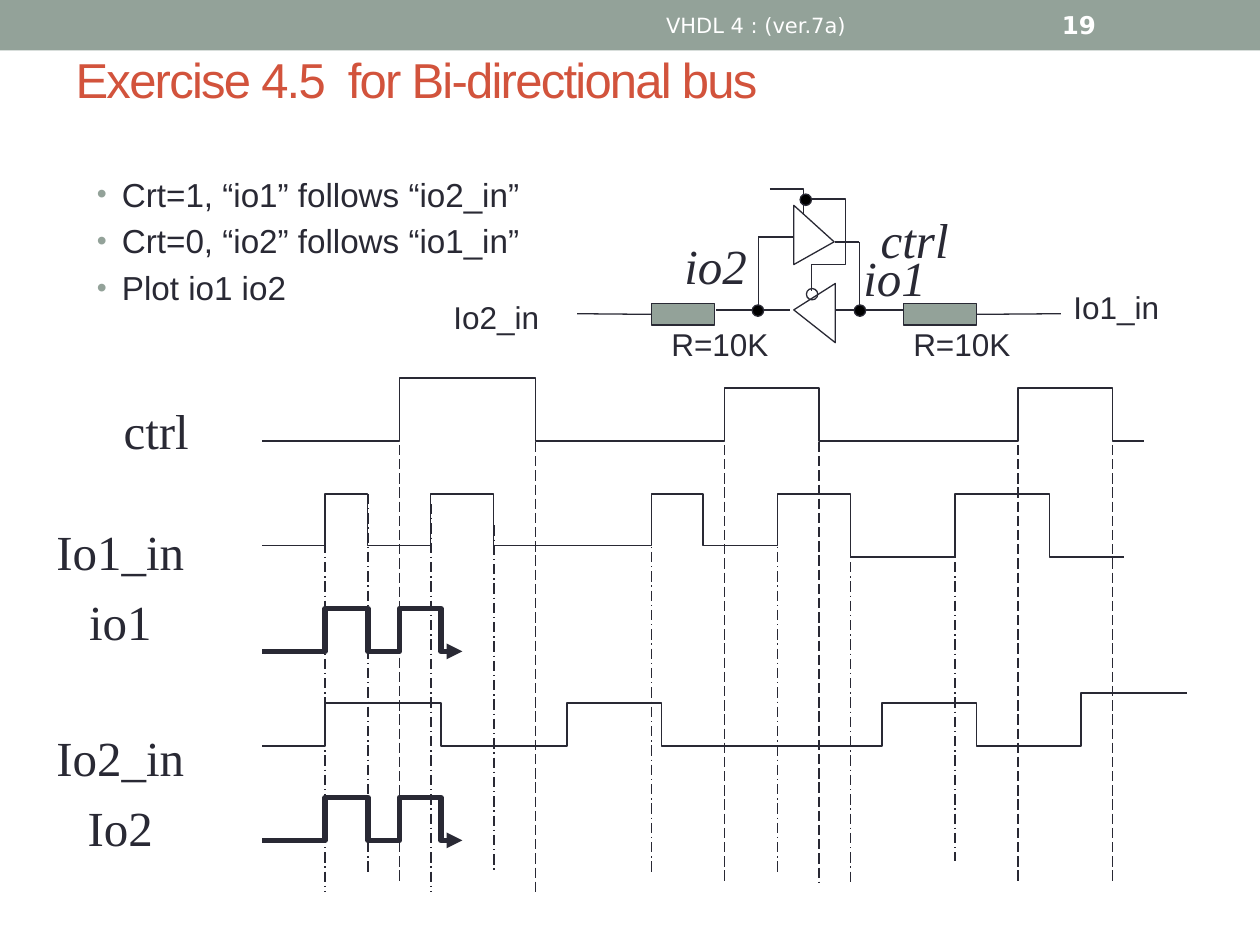
"""Build the bi-directional bus exercise slide."""
from lxml import etree
from pptx import Presentation
from pptx.dml.color import RGBColor
from pptx.enum import dml, shapes, text
from pptx.oxml.ns import qn
from pptx.util import Inches, Pt

INK, SAGE, RED, WHITE, BLACK = "292934", "93A299", "D2533C", "FFFFFF", "000000"
SERIF, SANS, HEADER = "Times New Roman", "Arial", "DejaVu Sans"
DASH, DASH_DOT = dml.MSO_LINE.LONG_DASH, dml.MSO_LINE.LONG_DASH_DOT


def color(value):
    """Turn a hex string into a colour."""
    return RGBColor.from_string(value)


def style_line(line, width=0.75):
    """Give a line the ink colour and a width in points."""
    line.color.rgb = color(INK)
    line.width = Pt(width)


def style_runs(paragraph, font, size, ink=INK, bold=False, italic=False):
    """Format every run of a paragraph."""
    for run in paragraph.runs:
        run.font.name, run.font.size = font, Pt(size)
        run.font.bold, run.font.italic = bold, italic
        run.font.color.rgb = color(ink)


def add_label(slide, box, words, font=SERIF, size=28, centred=True, middle=True, **look):
    """Add a one-line label."""
    frame = slide.shapes.add_textbox(*map(Inches, box)).text_frame
    frame.word_wrap = False
    frame.vertical_anchor = text.MSO_ANCHOR.MIDDLE if middle else text.MSO_ANCHOR.TOP
    frame.text = words
    paragraph = frame.paragraphs[0]
    paragraph.alignment = text.PP_ALIGN.CENTER if centred else text.PP_ALIGN.LEFT
    style_runs(paragraph, font, size, **look)


def add_box(slide, kind, box, fill=None, outline=True):
    """Add a preset shape, hollow unless a fill is given."""
    shape = slide.shapes.add_shape(kind, *map(Inches, box))
    shape.shadow.inherit = False
    if fill:
        shape.fill.solid()
        shape.fill.fore_color.rgb = color(fill)
    else:
        shape.fill.background()
    if outline:
        style_line(shape.line)
    else:
        shape.line.fill.background()
    return shape


def add_line(slide, start, end, dash=None):
    """Add a straight connector between two points."""
    connector = slide.shapes.add_connector(
        shapes.MSO_CONNECTOR.STRAIGHT, *map(Inches, (*start, *end)))
    style_line(connector.line)
    if dash:
        connector.line.dash_style = dash
    etree.SubElement(connector._element.spPr, qn("a:effectLst"))
    return connector


def add_path(slide, points, closed=False, width=0.75, arrow=False):
    """Add an unfilled outline through the points."""
    points = [(Inches(x), Inches(y)) for x, y in points]
    builder = slide.shapes.build_freeform(*points[0])
    builder.add_line_segments(points[1:], close=closed)
    shape = builder.convert_to_shape()
    shape.shadow.inherit = False
    shape.fill.background()
    style_line(shape.line, width)
    if arrow:
        outline = shape._element.spPr.find(qn("a:ln"))
        etree.SubElement(outline, qn("a:tailEnd"), type="triangle")


def add_wave(slide, level, edges, end, start=2.08, **look):
    """Draw a square wave from its (time, new level) edges."""
    points = [(start, level)]
    for x, new_level in edges:
        points += [(x, level), (x, new_level)]
        level = new_level
    add_path(slide, points + [(end, level)], **look)


def add_title(slide):
    """Place and format the title."""
    title = slide.shapes.title
    title.left, title.top, title.width, title.height = map(Inches, (0.5, 0, 9, 1.25))
    frame = title.text_frame
    frame.text = "Exercise 4.5  for Bi-directional bus"
    frame.vertical_anchor = text.MSO_ANCHOR.MIDDLE
    paragraph = frame.paragraphs[0]
    paragraph.alignment = text.PP_ALIGN.LEFT
    style_runs(paragraph, SANS, 28, RED)
    paragraph.runs[0].font._element.set("spc", "-100")


def add_bullets(slide, items):
    """Add the bulleted instructions."""
    frame = slide.shapes.add_textbox(*map(Inches, (0.67, 1.33, 8.5, 5.42))).text_frame
    frame.word_wrap = True
    frame.text = "\n".join(items)
    for paragraph in frame.paragraphs:
        paragraph.space_before = Pt(4)
        style_runs(paragraph, SANS, 19)
        properties = paragraph._p.get_or_add_pPr()
        properties.set("marL", str(Inches(0.2)))
        properties.set("indent", str(Inches(-0.2)))
        bullet_color = etree.SubElement(properties, qn("a:buClr"))
        etree.SubElement(bullet_color, qn("a:srgbClr"), val=SAGE)
        etree.SubElement(properties, qn("a:buSzPct"), val="85000")
        etree.SubElement(properties, qn("a:buFont"), typeface=SANS)
        etree.SubElement(properties, qn("a:buChar"), char="•")


def add_timing(slide):
    """Draw the waveforms, their labels and the time guides."""
    add_label(slide, (0.84, 3.13, 0.8, 0.57), "ctrl")
    for words, middle in (("Io1_in", 4.37), ("io1", 4.93), ("Io2_in", 6.01), ("Io2", 6.56)):
        add_label(slide, (0.08, middle - 0.28, 1.75, 0.56), words)

    add_wave(slide, 3.5, [(3.17, 3), (4.25, 3.5), (5.75, 3.08), (6.5, 3.5),
                          (8.08, 3.08), (8.83, 3.5)], 9.08)
    add_wave(slide, 4.33, [(2.58, 3.92), (2.92, 4.33), (3.42, 3.92), (3.92, 4.33),
                           (5.17, 3.92), (5.58, 4.33), (6.17, 3.92), (6.75, 4.42),
                           (7.58, 3.92), (8.33, 4.42)], 8.92)
    add_wave(slide, 5.92, [(2.58, 5.58), (3.5, 5.92), (4.5, 5.58), (5.25, 5.92),
                           (7, 5.58), (7.75, 5.92), (8.58, 5.5)], 9.42)
    for low in (5.17, 6.67):
        high = low - 0.34
        add_wave(slide, low, [(2.58, high), (2.92, low), (3.17, high), (3.5, low)],
                 3.67, width=3, arrow=True)

    for x, top, bottom in ((3.17, 3.08, 7), (4.25, 3.17, 7.08), (5.75, 3.08, 7),
                           (6.5, 3.17, 7), (8.08, 3.08, 7), (8.83, 3.08, 7)):
        add_line(slide, (x, top), (x, bottom), DASH)
    for x, top, bottom in ((2.58, 4, 7.08), (2.92, 3.92, 6.92), (3.42, 4, 7.08),
                           (3.92, 4.17, 6.92), (5.17, 3.92, 6.92), (6.17, 3.92, 6.92),
                           (6.75, 4, 7), (7.58, 4, 6.83)):
        add_line(slide, (x, top), (x, bottom), DASH_DOT)


def add_circuit(slide):
    """Draw the two tri-state buffers with their resistors."""
    add_path(slide, [(6.3, 2.1), (6.3, 1.63), (6.62, 1.92)], closed=True)
    add_path(slide, [(6.63, 2.25), (6.3, 2.46), (6.63, 2.72)], closed=True)
    add_path(slide, [(6.11, 1.5), (6.38, 1.5), (6.38, 1.71)])
    add_path(slide, [(6.4, 1.58), (6.71, 1.58), (6.71, 2.1), (6.44, 2.1), (6.44, 2.31)])
    for start, end in (((6.02, 1.88), (6.29, 1.88)), ((6.63, 1.92), (6.82, 1.92)),
                       ((6.63, 2.46), (7.18, 2.46)), ((6.27, 2.46), (5.68, 2.46)),
                       ((6.82, 1.92), (6.82, 2.47)), ((6.02, 2.47), (6.02, 1.88))):
        add_line(slide, start, end)

    for x, y, fill in ((6.4, 2.29, None), (5.97, 2.42, BLACK),
                       (6.78, 2.42, BLACK), (6.35, 1.54, BLACK)):
        add_box(slide, shapes.MSO_SHAPE.OVAL, (x, y, 0.09, 0.09), fill)

    left = add_box(slide, shapes.MSO_SHAPE.RECTANGLE, (5.17, 2.41, 0.5, 0.17), SAGE)
    right = add_box(slide, shapes.MSO_SHAPE.RECTANGLE, (7.17, 2.41, 0.58, 0.17), SAGE)
    add_line(slide, (4.58, 2.49), (5.17, 2.49)).end_connect(left, 1)
    add_line(slide, (7.75, 2.49), (8.42, 2.49)).begin_connect(right, 3)

    for words, x, y in (("io1", 6.7, 1.91), ("ctrl", 6.86, 1.61), ("io2", 5.28, 1.82)):
        add_label(slide, (x, y, 0.8, 0.57), words, italic=True)
    for words, x, y, width in (("Io1_in", 8.42, 2.24, 0.88), ("Io2_in", 3.5, 2.32, 0.88),
                               ("R=10K", 5.23, 2.53, 0.97), ("R=10K", 7.15, 2.53, 0.97)):
        add_label(slide, (x, y, width, 0.4), words, SANS, 18, centred=False, middle=False)


def main():
    """Build and save the slide."""
    presentation = Presentation()
    presentation.slide_width, presentation.slide_height = Inches(10), Inches(7.5)
    slide = presentation.slides.add_slide(presentation.slide_layouts[5])
    add_box(slide, shapes.MSO_SHAPE.RECTANGLE, (0, 0, 10, 0.4), SAGE, outline=False)
    add_title(slide)
    add_label(slide, (3.75, 0.02, 4.5, 0.36), "VHDL 4 : (ver.7a)", HEADER, 12, ink=WHITE)
    add_label(slide, (8.33, 0.02, 1.17, 0.36), "19", HEADER, 14, centred=False,
              ink=WHITE, bold=True)
    add_bullets(slide, ["Crt=1, “io1” follows “io2_in”", "Crt=0, “io2” follows “io1_in”",
                        "Plot io1 io2"])
    add_timing(slide)
    add_circuit(slide)
    presentation.save("out.pptx")


if __name__ == "__main__":
    main()
